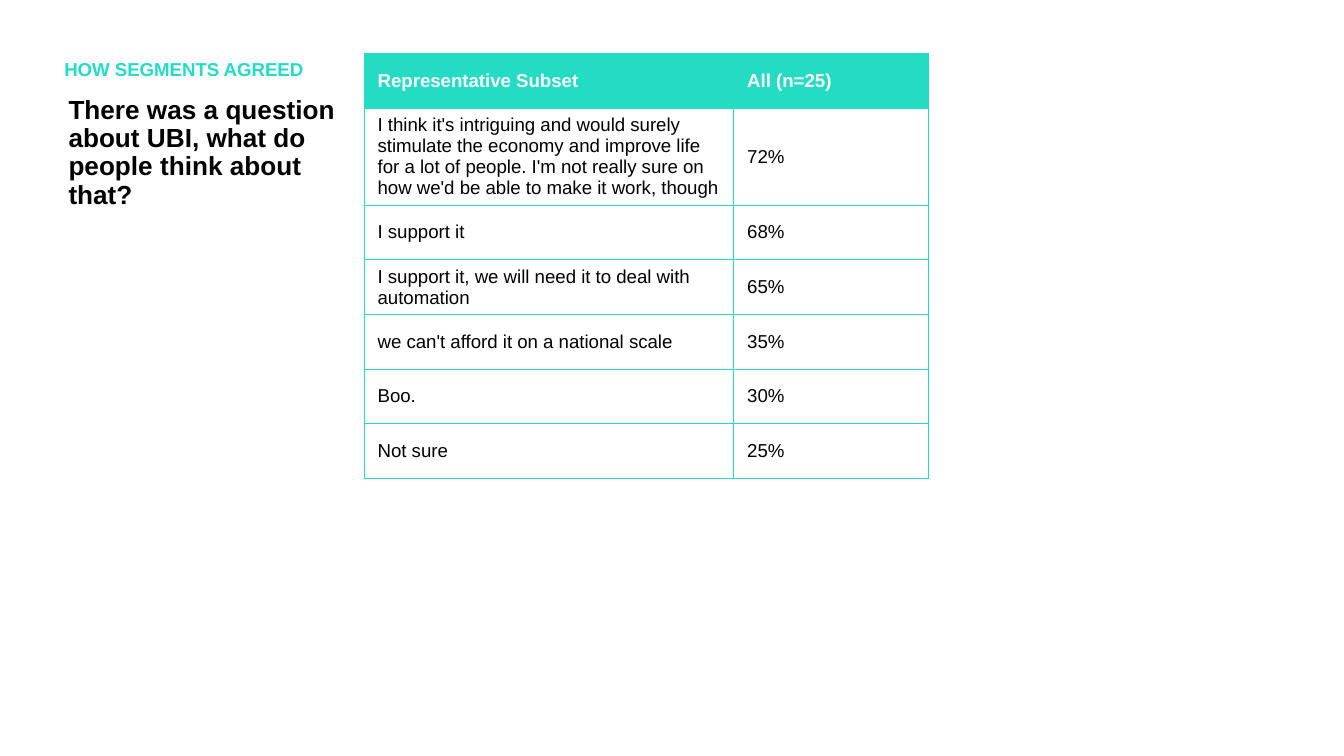
from lxml import etree
from pptx import Presentation
from pptx.dml.color import RGBColor
from pptx.enum import text
from pptx.oxml.ns import qn
from pptx.util import Inches, Pt

TEAL, BLACK, WHITE = "24DBC3", "000000", "FFFFFF"
LABEL = "HOW SEGMENTS AGREED"
TITLE = "There was a question about UBI, what do people think about that?"
ROWS = [
    ("Representative Subset", "All (n=25)"),
    ("I think it's intriguing and would surely stimulate the economy and "
     "improve life for a lot of people. I'm not really sure on how we'd be "
     "able to make it work, though", "72%"),
    ("I support it", "68%"),
    ("I support it, we will need it to deal with automation", "65%"),
    ("we can't afford it on a national scale", "35%"),
    ("Boo.", "30%"),
    ("Not sure", "25%"),
]
WIDTHS = (2.75, 1.45)
HEIGHT = 2.84


def rgb(value):
    return RGBColor.from_string(value)


def style(par, size, color, bold):
    font = par.font
    font.name, font.size, font.bold = "Arial", Pt(size), bold
    font.color.rgb = rgb(color)


def write(shape, words, box, size, color):
    shape.left, shape.top, shape.width, shape.height = map(Inches, box)
    frame = shape.text_frame
    frame.text = words
    frame.word_wrap = True
    frame.auto_size = text.MSO_AUTO_SIZE.NONE
    frame.vertical_anchor = text.MSO_ANCHOR.TOP
    par = frame.paragraphs[0]
    par.alignment = text.PP_ALIGN.LEFT
    par.line_spacing = 0.9
    par.space_before = Pt(10)
    style(par, size, color, True)


def border(cell, color):
    props = cell._tc.get_or_add_tcPr()
    for side in ("lnL", "lnR", "lnT", "lnB"):
        line = etree.SubElement(props, qn("a:" + side), w=str(Pt(0.75)))
        fill = etree.SubElement(line, qn("a:solidFill"))
        etree.SubElement(fill, qn("a:srgbClr"), val=color)


def build(slide):
    frame = slide.shapes.add_table(
        len(ROWS), len(WIDTHS), Inches(2.71), Inches(0.4),
        Inches(sum(WIDTHS)), Inches(HEIGHT))
    table = frame.table
    for col, width in zip(table.columns, WIDTHS):
        col.width = Inches(width)
    for r, row in enumerate(ROWS):
        table.rows[r].height = Inches(HEIGHT / len(ROWS))
        head = r == 0
        for c, words in enumerate(row):
            cell = table.cell(r, c)
            cell.text = words
            cell.vertical_anchor = text.MSO_ANCHOR.MIDDLE
            style(cell.text_frame.paragraphs[0], 10,
                  WHITE if head else BLACK, head)
            border(cell, TEAL)
            cell.fill.solid()
            cell.fill.fore_color.rgb = rgb(TEAL if head else WHITE)


def main():
    deck = Presentation()
    deck.slide_width, deck.slide_height = Inches(10), Inches(10 * 9 / 16)
    slide = deck.slides.add_slide(deck.slide_layouts[5])
    write(slide.shapes.title, TITLE, (0.41, 0.67, 2.3, 4.41), 14, BLACK)
    label = slide.shapes.add_textbox(0, 0, 0, 0)
    write(label, LABEL, (0.38, 0.4, 2.32, 0.28), 10, TEAL)
    build(slide)
    deck.save("out.pptx")


if __name__ == "__main__":
    main()
